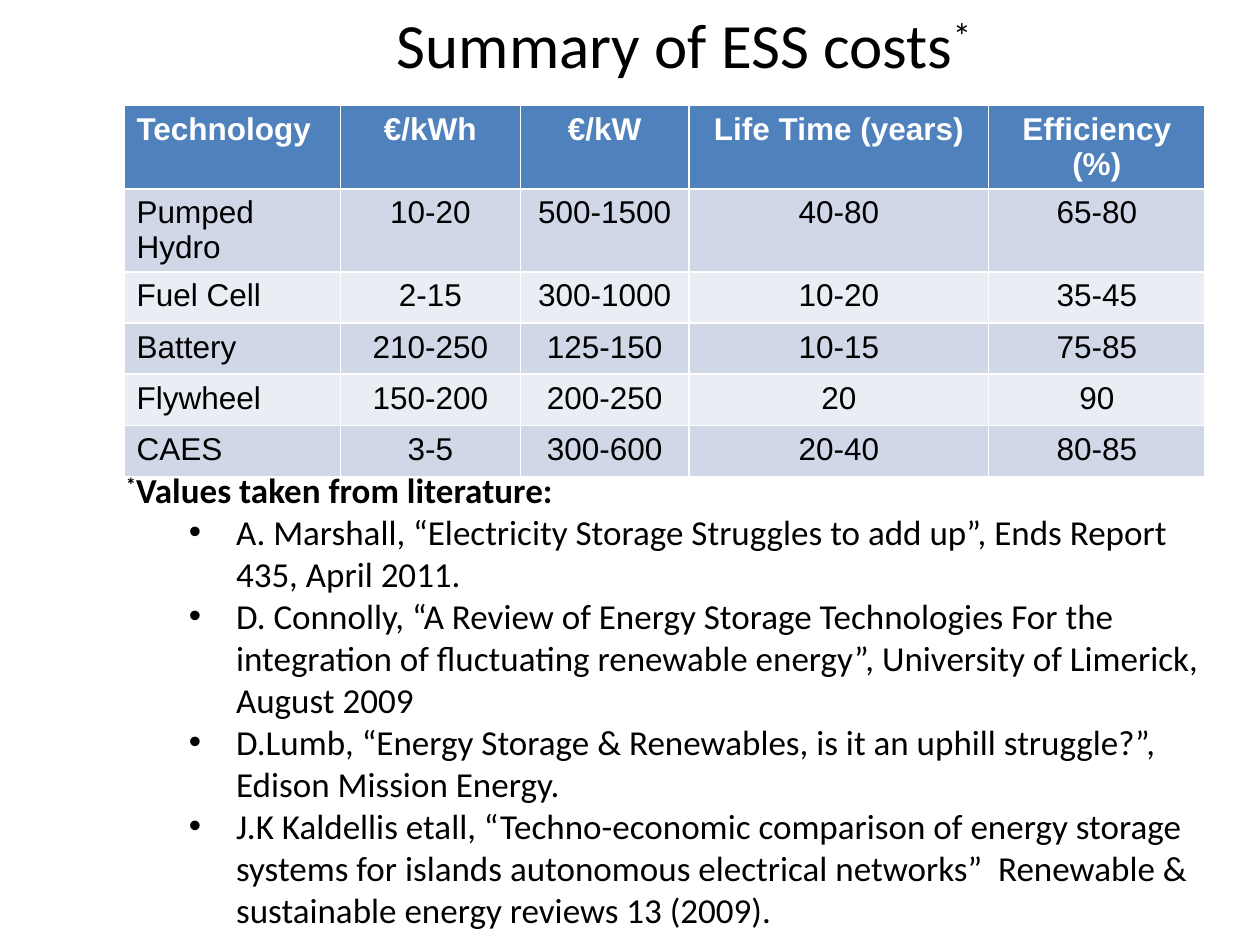
from lxml.etree import SubElement
from pptx import Presentation
from pptx.dml.color import RGBColor
from pptx.enum.text import MSO_ANCHOR, MSO_AUTO_SIZE, PP_ALIGN
from pptx.oxml.ns import qn
from pptx.util import Cm, Pt

BLACK = RGBColor(0x00, 0x00, 0x00)
WHITE = RGBColor(0xFF, 0xFF, 0xFF)
HEADER = RGBColor(0x4F, 0x81, 0xBD)
BANDS = (RGBColor(0xD0, 0xD8, 0xE8), RGBColor(0xE9, 0xED, 0xF4))

COSTS = [
    ("Technology", "€/kWh", "€/kW", "Life Time (years)", "Efficiency (%)"),
    ("Pumped Hydro", "10-20", "500-1500", "40-80", "65-80"),
    ("Fuel Cell", "2-15", "300-1000", "10-20", "35-45"),
    ("Battery", "210-250", "125-150", "10-15", "75-85"),
    ("Flywheel", "150-200", "200-250", "20", "90"),
    ("CAES", "3-5", "300-600", "20-40", "80-85"),
]
COLUMN_WIDTHS = (4.36, 3.63, 3.4, 6.04, 4.36)
ROW_HEIGHT = 1.03

REFERENCES = [
    "A. Marshall, “Electricity Storage Struggles to add up”, Ends Report 435, April 2011.",
    "D. Connolly, “A Review of Energy Storage Technologies For the integration of "
    "fluctuating renewable energy”, University of Limerick, August 2009",
    "D.Lumb, “Energy Storage & Renewables, is it an uphill struggle?”, Edison Mission Energy.",
    "J.K Kaldellis etall, “Techno-economic comparison of energy storage systems for islands "
    "autonomous electrical networks”  Renewable & sustainable energy reviews 13 (2009).",
]


def add_run(p, text, size, font="Calibri", color=BLACK, bold=False, superscript=False):
    r = p.add_run()
    r.text = text
    r.font.name = font
    r.font.size = Pt(size)
    r.font.bold = bold
    r.font.color.rgb = color
    if superscript:
        r._r.get_or_add_rPr().set("baseline", "30000")


def set_bullet(p, indent, hanging):
    pPr = p._p.get_or_add_pPr()
    pPr.set("marL", str(Cm(indent)))
    pPr.set("indent", str(-Cm(hanging)))
    SubElement(pPr, qn("a:buFont")).set("typeface", "Arial")
    SubElement(pPr, qn("a:buChar")).set("char", "•")


def place_title(s, left, top, width, height):
    sp = s.shapes.title
    sp.left, sp.top, sp.width, sp.height = Cm(left), Cm(top), Cm(width), Cm(height)
    tf = sp.text_frame
    tf.auto_size = MSO_AUTO_SIZE.NONE
    tf.vertical_anchor = MSO_ANCHOR.MIDDLE
    p = tf.paragraphs[0]
    p.alignment = PP_ALIGN.CENTER
    add_run(p, "Summary of ESS costs", 36)
    add_run(p, "*", 36, superscript=True)


def add_cost_table(s, left, top):
    """The white rules between cells come from the default table style."""
    table = s.shapes.add_table(
        len(COSTS), len(COLUMN_WIDTHS), Cm(left), Cm(top),
        Cm(sum(COLUMN_WIDTHS)), Cm(ROW_HEIGHT * len(COSTS))).table
    for column, width in zip(table.columns, COLUMN_WIDTHS):
        column.width = Cm(width)
    for i, values in enumerate(COSTS):
        table.rows[i].height = Cm(ROW_HEIGHT)
        is_header = i == 0
        for j, value in enumerate(values):
            cell = table.cell(i, j)
            cell.fill.solid()
            cell.fill.fore_color.rgb = HEADER if is_header else BANDS[(i - 1) % 2]
            p = cell.text_frame.paragraphs[0]
            p.alignment = PP_ALIGN.CENTER if j else PP_ALIGN.LEFT
            add_run(p, value, 18, "Arial", WHITE if is_header else BLACK, is_header)


def add_references(s, left, top, width, height):
    tf = s.shapes.add_textbox(Cm(left), Cm(top), Cm(width), Cm(height)).text_frame
    tf.word_wrap = True
    tf.auto_size = MSO_AUTO_SIZE.SHAPE_TO_FIT_TEXT
    p = tf.paragraphs[0]
    add_run(p, "*", 20, bold=True, superscript=True)
    add_run(p, "Values taken from literature:", 20, bold=True)
    for reference in REFERENCES:
        p = tf.add_paragraph()
        p.level = 1
        set_bullet(p, 2.22, 0.95)
        add_run(p, reference, 20)


def main():
    prs = Presentation()
    prs.slide_width, prs.slide_height = Cm(25.4), Cm(19.05)
    s = prs.slides.add_slide(prs.slide_layouts[5])
    place_title(s, 6.55, 0, 14.48, 1.73)
    add_cost_table(s, 2.5, 2.13)
    add_references(s, 2.29, 9.32, 22.6, 10.44)
    prs.save("out.pptx")


if __name__ == "__main__":
    main()
